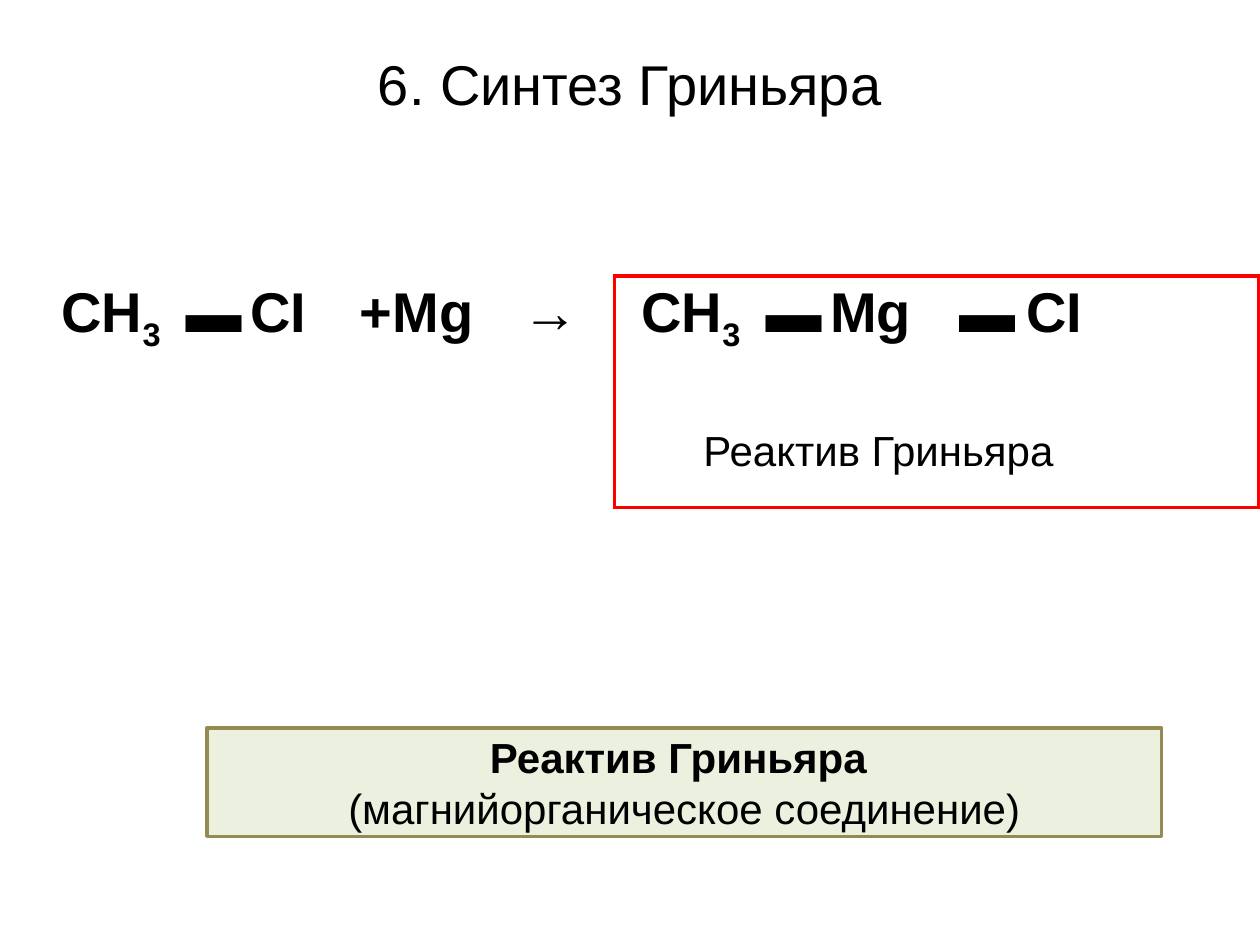
import pptx
import pptx.util
import pptx.dml.color
import pptx.enum.shapes
import pptx.enum.text
import pptx.oxml
import pptx.oxml.ns

Cm = pptx.util.Cm
PP_ALIGN = pptx.enum.text.PP_ALIGN
MIDDLE = pptx.enum.text.MSO_ANCHOR.MIDDLE
COLORS = {"text": "000000", "frame": "FF0000", "note": "EBF1DE", "edge": "948A54"}
NO_GRID = "{2D5ABB26-0587-4C30-8999-92F81FD0307C}"
COLUMNS = [2.7, 1.3, 2.21, 2.79, 2.6, 2.79, 1.3, 2.6, 1.35, 2.6, 2.34]
ROWS = [2.95, 1.72, 1.5]
FORMULA = ["СН3", "▬", "СI", "+Mg", "→", "СН3", "▬", "Mg", "▬", "СI", ""]
PRODUCT = 5


def rgb(name):
    """Return the named colour."""
    return pptx.dml.color.RGBColor.from_string(COLORS[name])


def add_run(p, text, size, bold=False, name="Arial", baseline=None):
    """Add a formatted run to a paragraph."""
    r = p.add_run()
    r.text = text
    fmt = {"size": pptx.util.Pt(size), "bold": bold, "name": name}
    for key, value in fmt.items():
        setattr(r.font, key, value)
    r.font.color.rgb = rgb("text")
    if baseline:
        r.font._element.set("baseline", str(baseline))


def add_title(s, text):
    """Place and fill the title placeholder."""
    sp = s.shapes.title
    box = {"left": Cm(1.27), "top": Cm(0.76), "width": Cm(22.86), "height": Cm(1.83)}
    for key, value in box.items():
        setattr(sp, key, value)
    tf = sp.text_frame
    tf.vertical_anchor = MIDDLE
    p = tf.paragraphs[0]
    p.alignment = PP_ALIGN.CENTER
    add_run(p, text, 32)


def set_borders(cell, sides):
    """Draw red lines on the given sides of a cell and clear the others."""
    tcPr = cell._tc.get_or_add_tcPr()
    red = f'<a:solidFill><a:srgbClr val="{COLORS["frame"]}"/></a:solidFill>'
    for i, side in enumerate("LRTB"):
        tcPr.insert(i, pptx.oxml.parse_xml(
            f'<a:ln{side} {pptx.oxml.ns.nsdecls("a")} w="{pptx.util.Pt(2.25)}">'
            f'{red if side in sides else "<a:noFill/>"}</a:ln{side}>'))


def frame_sides(row, col):
    """Return the sides of a cell that lie on the product frame."""
    if col < PRODUCT:
        return "R" if col == PRODUCT - 1 and row < 2 else ""
    sides = {0: "T", 1: "B", 2: "T"}[row]
    if row < 2:
        sides += "L" * (col == PRODUCT) + "R" * (col == len(COLUMNS) - 1)
    return sides


def fill_formula_cell(cell, text):
    """Write one part of the reaction into a cell."""
    p = cell.text_frame.paragraphs[0]
    if text == "→":
        p.alignment = PP_ALIGN.CENTER
    if text.endswith("3"):
        p.alignment = PP_ALIGN.RIGHT
        add_run(p, text[:-1], 32, True)
        add_run(p, "3", 32, True, baseline=-25000)
    elif text:
        if text != "→":
            cell.margin_right = 0
        add_run(p, text, 32, True, "Times New Roman" if text == "▬" else "Arial")


def add_reaction(s):
    """Add the reaction table with the framed product."""
    gf = s.shapes.add_table(len(ROWS), len(COLUMNS), Cm(0.79), Cm(5.56),
                            Cm(sum(COLUMNS)), Cm(sum(ROWS)))
    table = gf.table
    table.first_row = table.horz_banding = False
    table._tbl.tblPr.find(pptx.oxml.ns.qn("a:tableStyleId")).text = NO_GRID
    for col, width in zip(table.columns, COLUMNS):
        col.width = Cm(width)
    for row, height in zip(table.rows, ROWS):
        row.height = Cm(height)
    for i in range(len(ROWS)):
        for j in range(len(COLUMNS)):
            cell = table.cell(i, j)
            cell.fill.background()
            set_borders(cell, frame_sides(i, j))
    for j, text in enumerate(FORMULA):
        fill_formula_cell(table.cell(0, j), text)
    label = table.cell(1, PRODUCT)
    label.merge(table.cell(1, len(COLUMNS) - 2))
    p = label.text_frame.paragraphs[0]
    p.alignment = PP_ALIGN.CENTER
    add_run(p, "Реактив Гриньяра", 24)


def add_note(s, lines):
    """Add the filled box with centred lines."""
    sp = s.shapes.add_shape(pptx.enum.shapes.MSO_SHAPE.RECTANGLE,
                            Cm(4.17), Cm(14.68), Cm(19.25), Cm(2.18))
    sp.shadow.inherit = False
    sp.fill.solid()
    sp.fill.fore_color.rgb = rgb("note")
    sp.line.color.rgb = rgb("edge")
    sp.line.width = pptx.util.Pt(2)
    tf = sp.text_frame
    tf.word_wrap = True
    tf.vertical_anchor = MIDDLE
    for i, (text, bold) in enumerate(lines):
        p = tf.add_paragraph() if i else tf.paragraphs[0]
        p.alignment = PP_ALIGN.CENTER
        add_run(p, text, 24, bold)


def main():
    """Build the slide."""
    prs = pptx.Presentation()
    prs.slide_width, prs.slide_height = Cm(25.4), Cm(19.05)
    s = prs.slides.add_slide(prs.slide_layouts[5])
    add_title(s, "6. Синтез Гриньяра")
    add_reaction(s)
    add_note(s, [("Реактив Гриньяра ", True),
                 ("(магнийорганическое соединение)", False)])
    prs.save("out.pptx")


if __name__ == "__main__":
    main()
